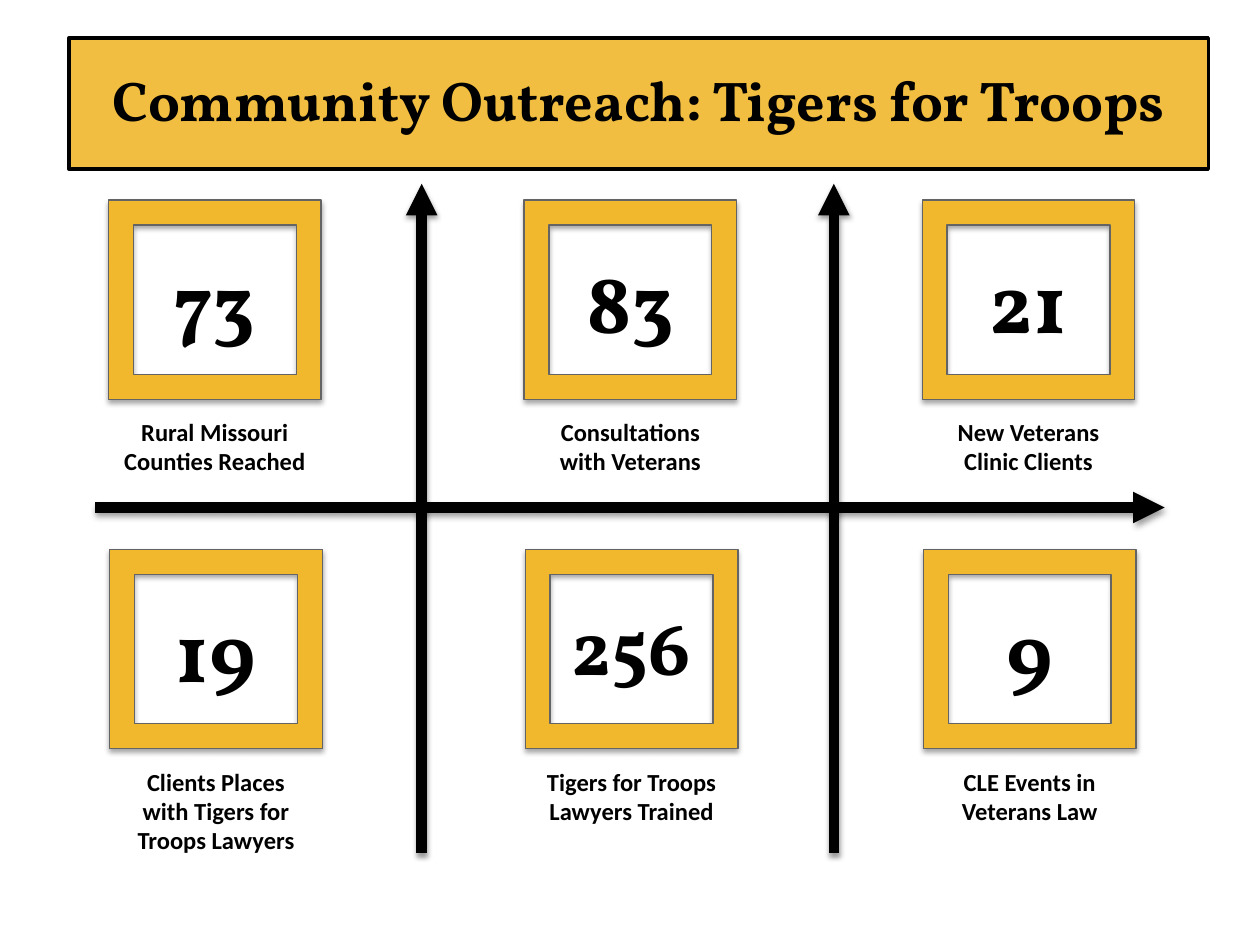
from lxml import etree
from pptx import Presentation
from pptx.dml.color import RGBColor
from pptx.enum.shapes import MSO_CONNECTOR, MSO_SHAPE
from pptx.enum.text import MSO_ANCHOR, MSO_AUTO_SIZE, PP_ALIGN
from pptx.oxml import parse_xml
from pptx.oxml.ns import nsdecls, qn
from pptx.util import Pt

FRAME, RECTANGLE = MSO_SHAPE.FRAME, MSO_SHAPE.RECTANGLE
STRAIGHT = MSO_CONNECTOR.STRAIGHT
CENTER, MIDDLE = PP_ALIGN.CENTER, MSO_ANCHOR.MIDDLE
GROW = MSO_AUTO_SIZE.SHAPE_TO_FIT_TEXT

GOLD, BLACK, GRAY = "F1B82D", "000000", "646464"
SERIF, SANS = "Vollkorn", "Calibri"

# Content
TITLE = "Community Outreach: Tigers for Troops"
# Rows of (number, number size, label lines, label width, label height)
STATISTICS = [
    [("73", 48, ["Rural Missouri Counties Reached"], 139.5, 41),
     ("83", 48, ["Consultations", "with Veterans"], 121.5, 41),
     ("21", 48, ["New Veterans Clinic Clients"], 121.5, 41)],
    [("19", 48, ["Clients Places with Tigers for Troops Lawyers"], 121.5, 58),
     ("256", 44, ["Tigers for Troops Lawyers Trained"], 121.5, 41),
     ("9", 48, ["CLE Events in Veterans Law"], 121.5, 41)],
]
# Arrows as (start x, start y, end x, end y)
ARROWS = [(241, 487.5, 241, 105), (476.5, 487.5, 476.5, 105), (54.5, 290, 665.5, 290)]

# Layout
COLUMN_LEFTS = [62, 299.5, 527]
ROW_TOPS = [114.3, 314]
ROW_SHIFT = 0.7
FRAME_WIDTH, FRAME_HEIGHT = 121.5, 113.8
NUMBER_OFFSET, LABEL_OFFSET = 24.5, 120.5
NUMBER_WIDTH, NUMBER_HEIGHT = 93.6, 65.5


def color(value):
    return RGBColor.from_string(value)


def add_shadow(shape, opacity, distance):
    properties = shape._element.spPr
    for effects in properties.findall(qn("a:effectLst")):
        properties.remove(effects)
    properties.append(parse_xml(
        f'<a:effectLst {nsdecls("a")}><a:outerShdw blurRad="{Pt(3.1)}" '
        f'dist="{Pt(distance)}" dir="5400000" rotWithShape="0">'
        f'<a:srgbClr val="{BLACK}"><a:alpha val="{opacity * 1000}"/></a:srgbClr>'
        '</a:outerShdw></a:effectLst>'))


def style_text(paragraph, text, font_name, size):
    paragraph.text = text
    paragraph.alignment = CENTER
    font = paragraph.font
    font.name, font.size, font.bold = font_name, Pt(size), True
    font.color.rgb = color(BLACK)


def add_text(slide, center, top, width, height, lines, font_name, size):
    box = slide.shapes.add_textbox(Pt(center - width / 2), Pt(top), Pt(width), Pt(height))
    frame = box.text_frame
    frame.word_wrap = True
    frame.auto_size = GROW
    for index, line in enumerate(lines):
        paragraph = frame.add_paragraph() if index else frame.paragraphs[0]
        style_text(paragraph, line, font_name, size)


def add_statistic(slide, left, top, number, size, label, label_width, label_height):
    shape = slide.shapes.add_shape(FRAME, Pt(left), Pt(top), Pt(FRAME_WIDTH), Pt(FRAME_HEIGHT))
    shape.fill.solid()
    shape.fill.fore_color.rgb = color(GOLD)
    shape.line.color.rgb = color(GRAY)
    shape.line.width = Pt(0.75)
    add_shadow(shape, 35, 1.8)
    center = left + FRAME_WIDTH / 2
    add_text(slide, center, top + NUMBER_OFFSET, NUMBER_WIDTH, NUMBER_HEIGHT,
             [number], SERIF, size)
    add_text(slide, center, top + LABEL_OFFSET, label_width, label_height,
             label, SANS, 14)


def add_arrow(slide, points):
    arrow = slide.shapes.add_connector(STRAIGHT, *[Pt(value) for value in points])
    arrow.line.color.rgb = color(BLACK)
    arrow.line.width = Pt(6)
    etree.SubElement(arrow.line._get_or_add_ln(), qn("a:tailEnd"), type="triangle")
    add_shadow(arrow, 38, 1.6)


def add_banner(slide):
    banner = slide.shapes.add_shape(RECTANGLE, Pt(39.5), Pt(21.7), Pt(651), Pt(75))
    banner.shadow.inherit = False
    banner.fill.solid()
    banner.fill.fore_color.rgb = color(GOLD)
    fill_color = banner._element.spPr.find(qn("a:solidFill"))[0]
    etree.SubElement(fill_color, qn("a:alpha"), val="90000")
    banner.line.color.rgb = color(BLACK)
    banner.line.width = Pt(2)
    frame = banner.text_frame
    frame.word_wrap = True
    frame.vertical_anchor = MIDDLE
    frame.margin_left = frame.margin_right = Pt(9.6)
    frame.margin_top = frame.margin_bottom = Pt(9.6)
    style_text(frame.paragraphs[0], TITLE, SERIF, 32)
    frame.paragraphs[0].line_spacing = 0.9


def main():
    presentation = Presentation()
    presentation.slide_width, presentation.slide_height = Pt(720), Pt(540)
    slide = presentation.slides.add_slide(presentation.slide_layouts[6])

    # Grid of framed numbers with labels
    for row, statistics in enumerate(STATISTICS):
        for left, statistic in zip(COLUMN_LEFTS, statistics):
            add_statistic(slide, left + row * ROW_SHIFT, ROW_TOPS[row], *statistic)

    # Dividing arrows
    for points in ARROWS:
        add_arrow(slide, points)

    add_banner(slide)
    presentation.save("out.pptx")


if __name__ == "__main__":
    main()
